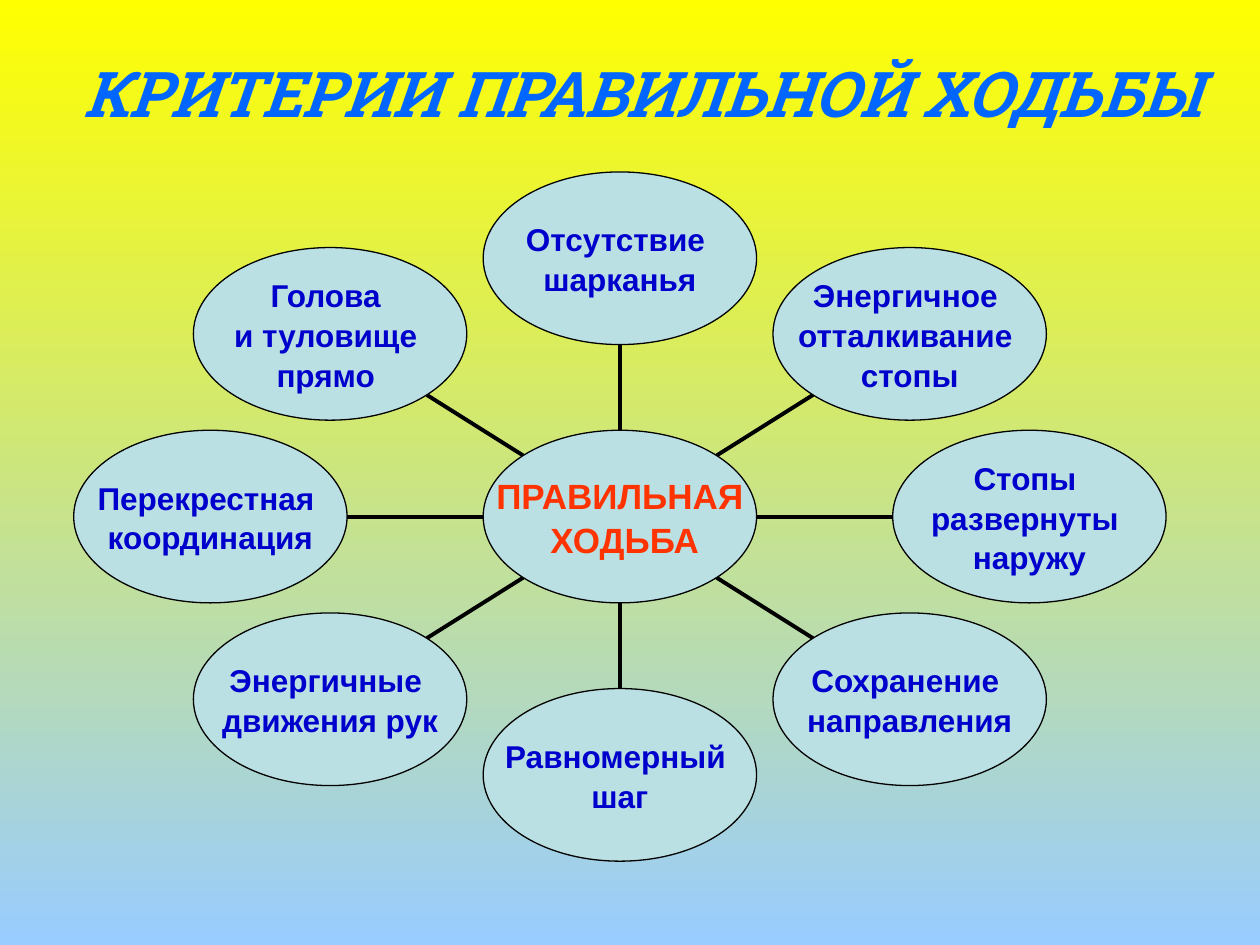
"""Build a slide with a radial diagram of the criteria of correct walking."""
from math import atan2, cos, sin

from lxml.etree import SubElement
from pptx import Presentation
from pptx.dml.color import RGBColor
from pptx.enum.shapes import MSO_CONNECTOR as CONNECTOR, MSO_SHAPE as SHAPE
from pptx.enum.text import MSO_ANCHOR as ANCHOR, PP_ALIGN as ALIGN
from pptx.oxml.ns import qn
from pptx.util import Inches, Pt

YELLOW = RGBColor(0xFF, 0xFF, 0x00)
SKY = RGBColor(0x99, 0xCC, 0xFF)
TITLE_BLUE = RGBColor(0x00, 0x66, 0xFF)
PALE_TEAL = RGBColor(0xBB, 0xE0, 0xE3)
NAVY = RGBColor(0x00, 0x00, 0xCC)
RED = RGBColor(0xFF, 0x33, 0x00)
BLACK = RGBColor(0x00, 0x00, 0x00)

CENTER_X, CENTER_Y = 4.92, 4.1
WIDTH, HEIGHT = 2.17, 1.37
CRITERIA = [
    (-2.3, -1.45, ["Голова ", "и туловище ", "прямо "]),
    (-3.25, 0, ["Перекрестная ", "координация"]),
    (-2.3, 1.45, ["Энергичные ", "движения рук"]),
    (0, 2.05, ["Равномерный ", "шаг"]),
    (2.3, 1.45, ["Сохранение ", "направления"]),
    (3.25, 0, ["Стопы ", "развернуты ", "наружу"]),
    (2.3, -1.45, ["Энергичное ", "отталкивание ", "стопы"]),
    (0, -2.05, ["Отсутствие ", "шарканья"]),
]


def write_lines(shape, lines, font_name, size, color):
    frame = shape.text_frame
    frame.word_wrap = False
    frame.vertical_anchor = ANCHOR.MIDDLE
    frame.margin_left = frame.margin_right = 0
    frame.margin_top = frame.margin_bottom = 0
    frame.text = "\n".join(lines)
    for paragraph in frame.paragraphs:
        paragraph.alignment = ALIGN.CENTER
        paragraph.line_spacing = 1.05
        paragraph.font.name = font_name
        paragraph.font.size = Pt(size)
        paragraph.font.bold = True
        paragraph.font.color.rgb = color


def add_ellipse(x, y, lines, size, color):
    ellipse = slide.shapes.add_shape(
        SHAPE.OVAL, Inches(x - WIDTH / 2), Inches(y - HEIGHT / 2), Inches(WIDTH), Inches(HEIGHT))
    ellipse.shadow.inherit = False
    ellipse.fill.solid()
    ellipse.fill.fore_color.rgb = PALE_TEAL
    ellipse.line.color.rgb = BLACK
    ellipse.line.width = Pt(0.75)
    write_lines(ellipse, lines, "Arial", size, color)


presentation = Presentation()
presentation.slide_width = Inches(10)
presentation.slide_height = Inches(7.5)
slide = presentation.slides.add_slide(presentation.slide_layouts[6])

background = slide.background.fill
background.gradient()
background.gradient_angle = 270
for stop, color in zip(background.gradient_stops, (YELLOW, SKY)):
    stop.color.rgb = color

title = slide.shapes.add_textbox(Inches(0.2), Inches(0.52), Inches(9.8), Inches(0.39))
write_lines(title, ["КРИТЕРИИ ПРАВИЛЬНОЙ ХОДЬБЫ"], "Roboto Slab", 36, TITLE_BLUE)
title.text_frame.paragraphs[0].font.italic = True

for offset_x, offset_y, lines in CRITERIA:
    x, y = CENTER_X + offset_x, CENTER_Y + offset_y
    angle = atan2((offset_y > 0) - (offset_y < 0), (offset_x > 0) - (offset_x < 0))
    edge_x, edge_y = WIDTH / 2 * cos(angle), HEIGHT / 2 * sin(angle)
    spoke = slide.shapes.add_connector(
        CONNECTOR.STRAIGHT, Inches(CENTER_X + edge_x), Inches(CENTER_Y + edge_y),
        Inches(x - edge_x), Inches(y - edge_y))
    spoke.line.color.rgb = BLACK
    spoke.line.width = Pt(2.25)
    SubElement(spoke._element.spPr, qn("a:effectLst"))
    add_ellipse(x, y, lines, 18, NAVY)

add_ellipse(CENTER_X, CENTER_Y, ["ПРАВИЛЬНАЯ", " ХОДЬБА"], 20, RED)

presentation.save("out.pptx")
